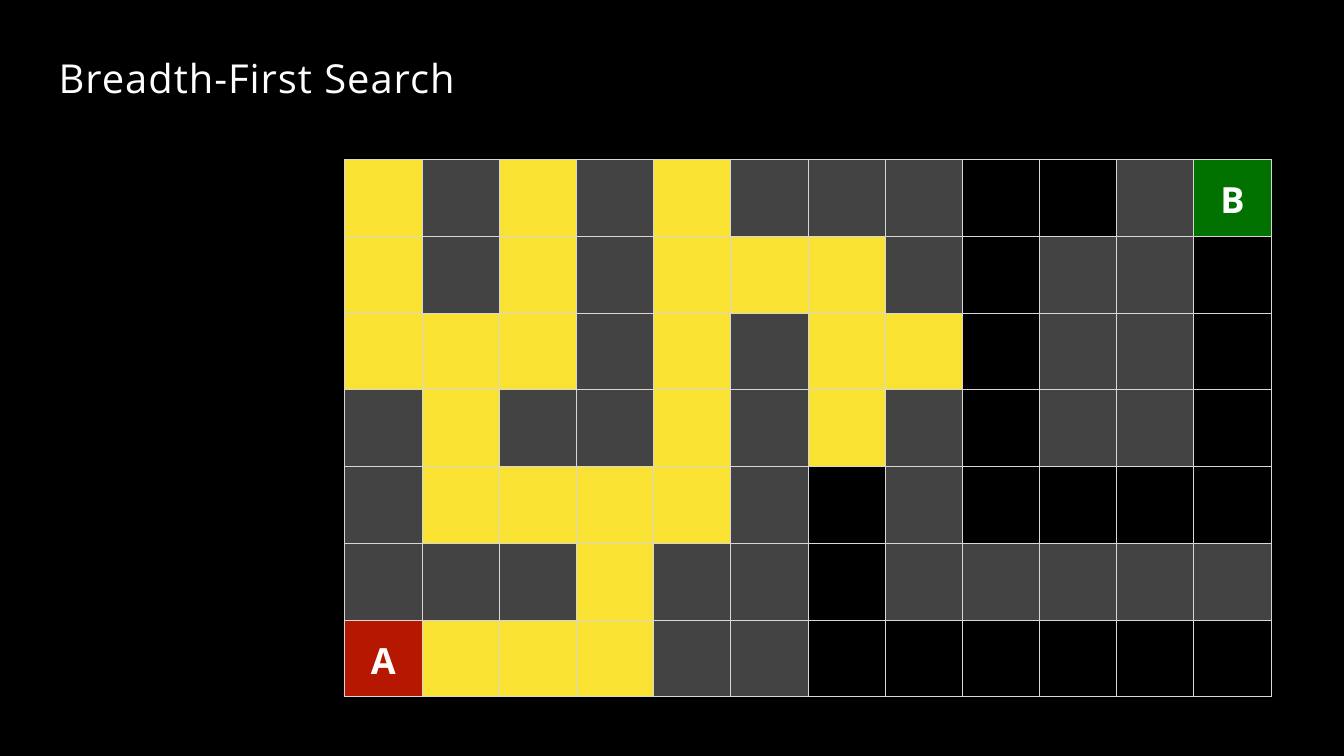
from dataclasses import dataclass

from lxml import etree
from pptx import Presentation
from pptx.dml.color import RGBColor
from pptx.enum import text
from pptx.oxml import ns
from pptx.util import Inches, Pt


@dataclass(frozen=True)
class Theme:
    font: str = "Open Sans"
    background: str = "000000"
    ink: str = "FFFFFF"
    grid: str = "D6D7D6"
    wall: str = "434343"
    explored: str = "FAE232"
    start: str = "B51700"
    goal: str = "017100"
    title_size: float = 47
    label_size: float = 42.5


THEME = Theme()

MAZE = [
    "*#*#*###..#B",
    "*#*#***#.##.",
    "***#*#**.##.",
    "#*##*#*#.##.",
    "#****#.#....",
    "###*##.#####",
    "A***##......",
]

CELL_COLORS = {
    "#": THEME.wall,
    "*": THEME.explored,
    "A": THEME.start,
    "B": THEME.goal,
}


def set_fill(fill, color):
    fill.solid()
    fill.fore_color.rgb = RGBColor.from_string(color)


def write_text(frame, content, *, size, bold=False, spacing=0, align=text.PP_ALIGN.LEFT):
    paragraph = frame.paragraphs[0]
    paragraph.alignment = align
    run = paragraph.add_run()
    run.text = content
    run.font.name = THEME.font
    run.font.size = Pt(size)
    run.font.bold = bold
    run.font.color.rgb = RGBColor.from_string(THEME.ink)
    run.font._element.set("spc", str(round(spacing * 100)))


def add_title(slide, content):
    title = slide.shapes.title
    title.left, title.top = Inches(0.96), Inches(0.86)
    title.width, title.height = Inches(12.65), Inches(0.81)
    frame = title.text_frame
    frame.margin_left = frame.margin_right = frame.margin_bottom = 0
    frame.margin_top = Inches(0.01)
    frame.word_wrap = True
    frame.auto_size = text.MSO_AUTO_SIZE.NONE
    frame.vertical_anchor = text.MSO_ANCHOR.TOP
    write_text(frame, content, size=THEME.title_size, spacing=1.15)


def set_borders(cell):
    properties = cell._tc.get_or_add_tcPr()
    for side in ("lnL", "lnR", "lnT", "lnB"):
        line = etree.SubElement(properties, ns.qn(f"a:{side}"), w=str(Pt(1)))
        fill = etree.SubElement(line, ns.qn("a:solidFill"))
        etree.SubElement(fill, ns.qn("a:srgbClr"), val=THEME.grid)


def format_cell(cell, mark):
    set_borders(cell)
    if mark in CELL_COLORS:
        set_fill(cell.fill, CELL_COLORS[mark])
    else:
        cell.fill.background()
    cell.margin_left = cell.margin_right = cell.margin_bottom = 0
    cell.margin_top = Inches(0.06)
    cell.vertical_anchor = text.MSO_ANCHOR.MIDDLE
    if mark.isalpha():
        write_text(cell.text_frame, mark, size=THEME.label_size, bold=True,
                   spacing=2, align=text.PP_ALIGN.CENTER)


def add_maze(slide, maze):
    width, height = Inches(15.16), Inches(8.79)
    table = slide.shapes.add_table(len(maze), len(maze[0]), Inches(5.64),
                                   Inches(2.61), width, height).table
    table.first_row = table.horz_banding = False
    for column in table.columns:
        column.width = width // len(maze[0])
    for row in table.rows:
        row.height = height // len(maze)
    for row_index, marks in enumerate(maze):
        for column_index, mark in enumerate(marks):
            format_cell(table.cell(row_index, column_index), mark)


def main():
    presentation = Presentation()
    presentation.slide_width = Inches(21.99)
    presentation.slide_height = Inches(12.37)
    slide = presentation.slides.add_slide(presentation.slide_layouts[5])
    set_fill(slide.background.fill, THEME.background)
    add_title(slide, "Breadth-First Search")
    add_maze(slide, MAZE)
    presentation.save("out.pptx")


if __name__ == "__main__":
    main()
